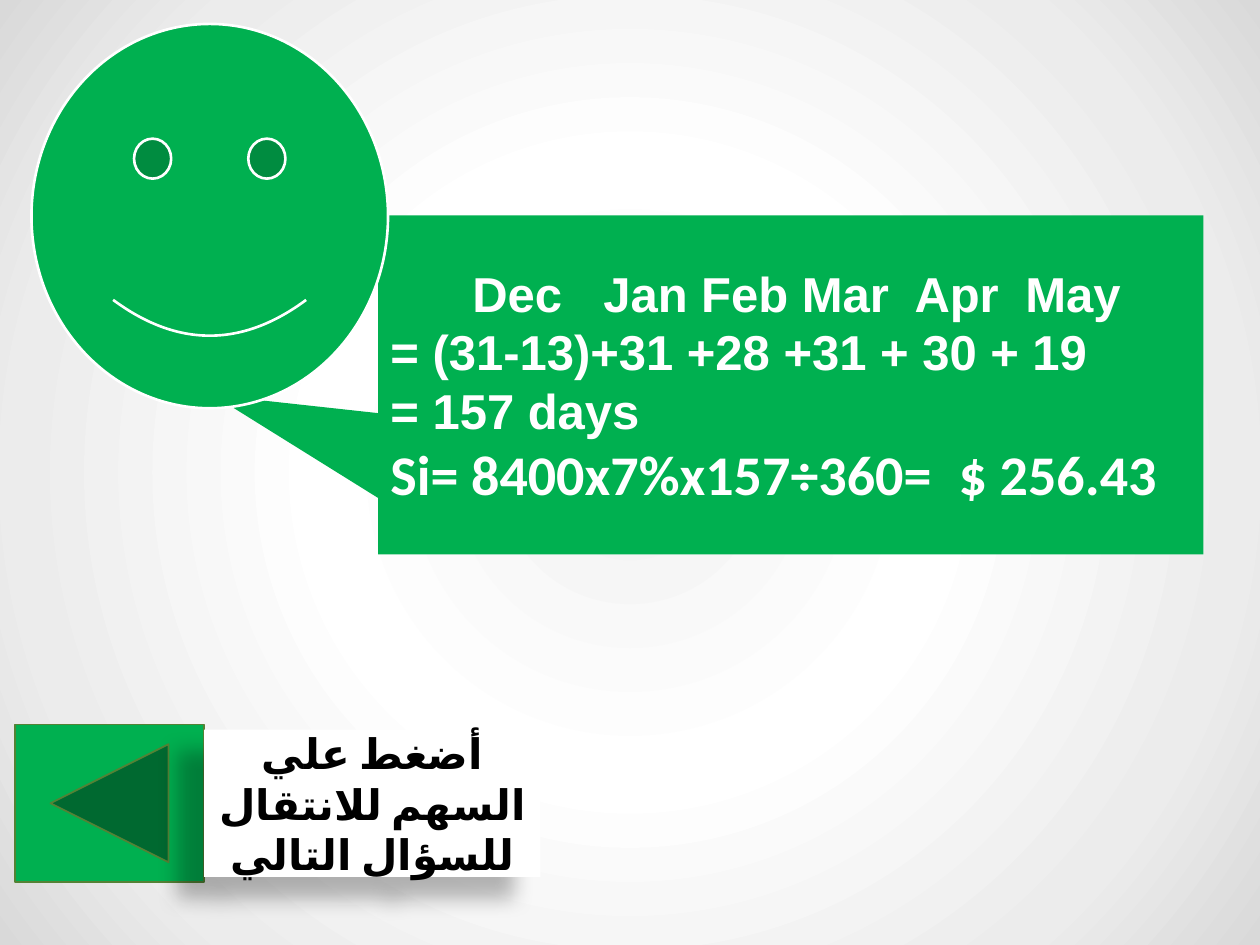
from dataclasses import dataclass

from lxml.etree import SubElement
from pptx import Presentation
from pptx.dml.color import RGBColor
from pptx.enum.shapes import MSO_SHAPE
from pptx.enum.text import MSO_ANCHOR, PP_ALIGN
from pptx.oxml import parse_xml
from pptx.oxml.ns import nsdecls, qn
from pptx.shapes.autoshape import Shape
from pptx.slide import Slide
from pptx.util import Inches, Pt

GREEN = RGBColor(0x00, 0xB0, 0x50)
DARK_GREEN = RGBColor(0x54, 0x82, 0x35)
WHITE = RGBColor(0xFF, 0xFF, 0xFF)
BLACK = RGBColor(0x00, 0x00, 0x00)
BACKGROUND_STOPS = [(0, "F2F2F2"), (39, "FFFFFF"), (78, "ECECEC"), (100, "D9D9D9")]


@dataclass
class Box:
    kind: MSO_SHAPE
    left: float
    top: float
    width: float
    height: float
    fill: RGBColor = GREEN
    line: RGBColor | None = None
    line_width: float = 1
    adjustments: tuple[float, ...] = ()


@dataclass
class Line:
    text: str
    size: int = 28
    font: str = "Arial"
    tabs: tuple[float, ...] = ()


CALLOUT = Box(MSO_SHAPE.RECTANGULAR_CALLOUT, 3, 1.71, 6.55, 2.69, adjustments=(-0.7, 0.03))
SMILEY = Box(MSO_SHAPE.SMILEY_FACE, 0.25, 0.19, 2.83, 3.05,
             line=WHITE, line_width=1.5, adjustments=(0.05,))
BACK_BUTTON = Box(MSO_SHAPE.ACTION_BUTTON_BACK_OR_PREVIOUS, 0.12, 5.75, 1.5, 1.25,
                  line=DARK_GREEN)
HINT = Box(MSO_SHAPE.RECTANGLE, 1.62, 5.79, 2.67, 1.17, fill=WHITE)

SOLUTION = [
    Line("\tDec\tJan Feb Mar\tApr\tMay", tabs=(0.65, 1.69, 4.16, 5.04)),
    Line("= (31-13)+31 +28 +31 + 30 + 19"),
    Line("= 157 days"),
    Line("Si= 8400x7%x157÷360=\t$ 256.43", size=32, font="Calibri", tabs=(4.51,)),
]
HINT_LINES = [Line("أضغط علي السهم للانتقال للسؤال التالي", size=24, font="Calibri")]


def set_radial_background(s: Slide) -> None:
    stops = "".join(f'<a:gs pos="{pos * 1000}"><a:srgbClr val="{color}"/></a:gs>'
                    for pos, color in BACKGROUND_STOPS)
    bg = parse_xml(
        f'<p:bg {nsdecls("p", "a")}><p:bgPr><a:gradFill rotWithShape="1">'
        f'<a:gsLst>{stops}</a:gsLst><a:path path="circle">'
        '<a:fillToRect l="50000" t="50000" r="50000" b="50000"/></a:path>'
        '</a:gradFill><a:effectLst/></p:bgPr></p:bg>')
    s.element.cSld.insert(0, bg)


def add_box(s: Slide, box: Box) -> Shape:
    sp = s.shapes.add_shape(box.kind, Inches(box.left), Inches(box.top),
                            Inches(box.width), Inches(box.height))
    sp.shadow.inherit = False
    sp.fill.solid()
    sp.fill.fore_color.rgb = box.fill
    if box.line is None:
        sp.line.fill.background()
    else:
        sp.line.color.rgb = box.line
        sp.line.width = Pt(box.line_width)
    for i, value in enumerate(box.adjustments):
        sp.adjustments[i] = value
    return sp


def write(sp: Shape, lines: list[Line], *, color: RGBColor, align: PP_ALIGN,
          lang: str = "en-US", rtl: bool = False) -> None:
    tf = sp.text_frame
    tf.word_wrap = True
    tf.vertical_anchor = MSO_ANCHOR.MIDDLE
    for i, line in enumerate(lines):
        p = tf.add_paragraph() if i else tf.paragraphs[0]
        p.alignment = align
        pPr = p._p.get_or_add_pPr()
        if rtl:
            pPr.set("rtl", "1")
        if line.tabs:
            tab_list = SubElement(pPr, qn("a:tabLst"))
            for pos in line.tabs:
                SubElement(tab_list, qn("a:tab"), pos=str(Inches(pos)), algn="l")
        r = p.add_run()
        r.text = line.text
        r.font.name = line.font
        r.font.size = Pt(line.size)
        r.font.bold = True
        r.font.color.rgb = color
        rPr = r._r.get_or_add_rPr()
        rPr.set("lang", lang)
        # Arabic letters take their font from the complex-script slot
        SubElement(rPr, qn("a:cs"), typeface=line.font)


def add_shadow(sp: Shape, *, blur: float, distance: float, angle: int, opacity: int) -> None:
    effects = sp._element.spPr.find(qn("a:effectLst"))
    shadow = SubElement(effects, qn("a:outerShdw"), blurRad=str(Pt(blur)),
                        dist=str(Pt(distance)), dir=str(angle * 60000), rotWithShape="0")
    shade = SubElement(shadow, qn("a:srgbClr"), val=str(BLACK))
    SubElement(shade, qn("a:alpha"), val=str(opacity * 1000))


def main() -> None:
    prs = Presentation()
    prs.slide_width, prs.slide_height = Inches(10), Inches(7.5)
    s = prs.slides.add_slide(prs.slide_layouts[6])
    set_radial_background(s)

    callout = add_box(s, CALLOUT)
    write(callout, SOLUTION, color=WHITE, align=PP_ALIGN.LEFT)
    add_box(s, SMILEY)

    add_box(s, BACK_BUTTON)
    hint = add_box(s, HINT)
    add_shadow(hint, blur=11.8, distance=19.7, angle=141, opacity=28)
    write(hint, HINT_LINES, color=BLACK, align=PP_ALIGN.CENTER, lang="ar-EG", rtl=True)

    prs.save("out.pptx")


if __name__ == "__main__":
    main()
